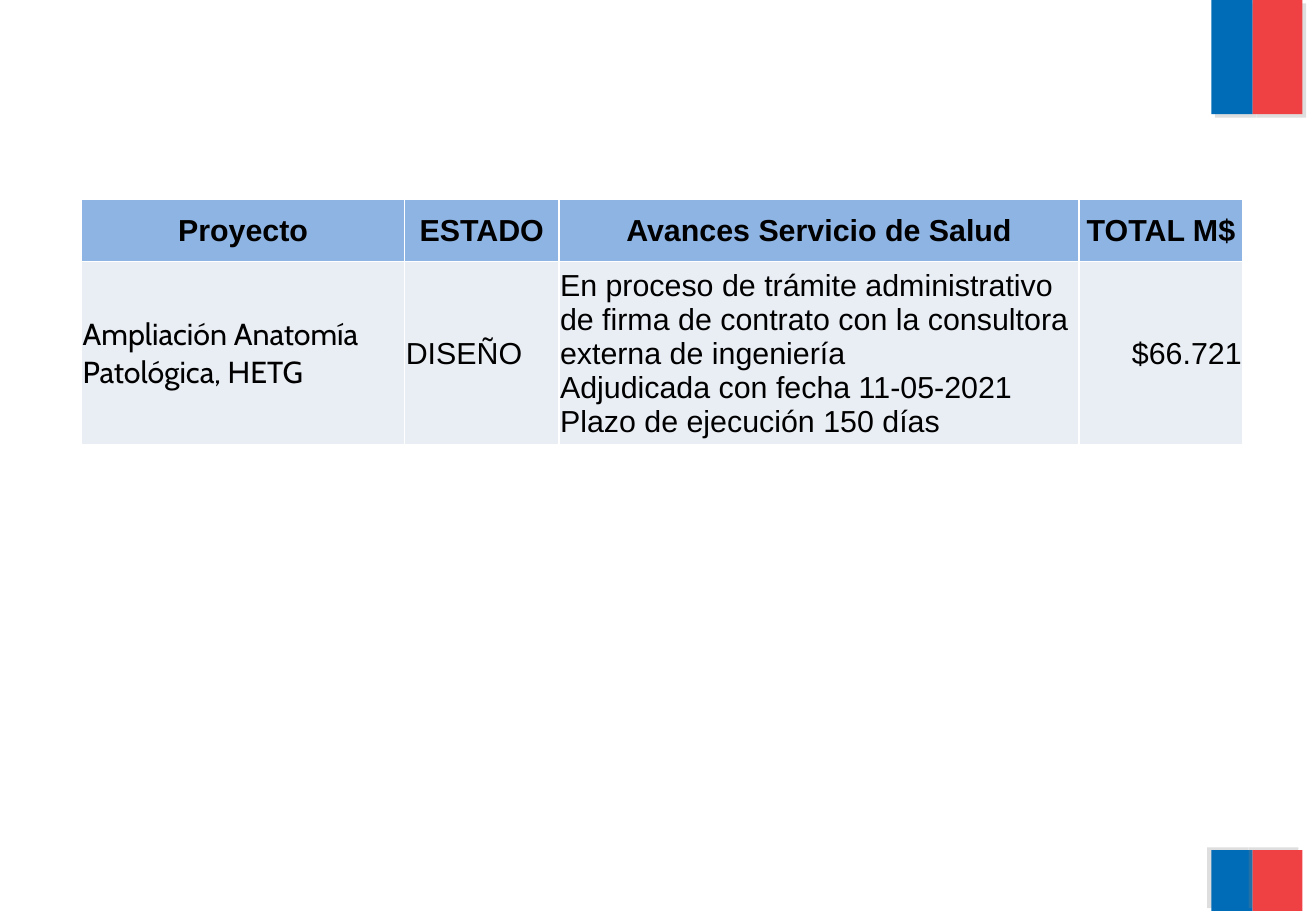
from lxml.etree import SubElement
from pptx import Presentation
from pptx.dml.color import RGBColor
from pptx.enum.shapes import MSO_SHAPE
from pptx.enum.text import MSO_ANCHOR, PP_ALIGN as ALIGN
from pptx.oxml.ns import qn
from pptx.util import Pt

COLORS = {
    "blue": "006CB7", "red": "EF4144", "shadow": "808080", "text": "000000",
    "header": "8EB4E3", "body": "E9EDF4", "border": "FFFFFF",
}
SLIDE_WIDTH, SLIDE_HEIGHT = 779.8, 540
COLUMN_WIDTHS = [191.5, 91.4, 308.3, 97]
ROW_HEIGHTS = [36.7, 108.7]
HEADERS = ["Proyecto", "ESTADO", "Avances Servicio de Salud", "TOTAL M$"]
PROJECT = [
    "Ampliación Anatomía Patológica, HETG",
    "DISEÑO",
    "En proceso de trámite administrativo de firma de contrato con la consultora "
    "externa de ingeniería\n"
    "Adjudicada con fecha 11-05-2021\n"
    "Plazo de ejecución 150 días",
    "$66.721",
]
PROJECT_FONTS = ["Cabin", "Arial", "Arial", "Arial"]
PROJECT_ALIGNS = [ALIGN.LEFT, ALIGN.LEFT, ALIGN.LEFT, ALIGN.RIGHT]


def add_solid_fill(parent, color):
    fill = SubElement(parent, qn("a:solidFill"))
    SubElement(fill, qn("a:srgbClr"), val=COLORS[color])


class SlideBuilder:
    font_size = 18
    shadow_distance = 3
    shadow_alpha = 25

    def __init__(self, slide):
        self.slide = slide

    def band(self, left, top, width, height, color, shadow_angle):
        """Add a plain rectangle with a hard shadow cast at the given angle."""
        shape = self.slide.shapes.add_shape(
            MSO_SHAPE.RECTANGLE, Pt(left), Pt(top), Pt(width), Pt(height))
        shape.fill.solid()
        shape.fill.fore_color.rgb = RGBColor.from_string(COLORS[color])
        shape.line.fill.background()
        shape.shadow.inherit = False
        effects = shape._element.spPr.find(qn("a:effectLst"))
        shadow = SubElement(
            effects, qn("a:outerShdw"), blurRad="0", dist=str(Pt(self.shadow_distance)),
            dir=str(shadow_angle * 60000), algn="ctr", rotWithShape="0")
        shadow_color = SubElement(shadow, qn("a:srgbClr"), val=COLORS["shadow"])
        SubElement(shadow_color, qn("a:alpha"), val=str(self.shadow_alpha * 1000))

    def flag(self, top, height, shadow_angle):
        """Add the blue and red bands side by side."""
        self.band(717.8, top, 24.5, height, "blue", shadow_angle)
        self.band(742.3, top, 29.5, height, "red", shadow_angle)

    def table(self, left, top, column_widths, row_heights):
        table = self.slide.shapes.add_table(
            len(row_heights), len(column_widths), Pt(left), Pt(top),
            Pt(sum(column_widths)), Pt(sum(row_heights))).table
        for column, width in zip(table.columns, column_widths):
            column.width = Pt(width)
        for row, height in zip(table.rows, row_heights):
            row.height = Pt(height)
        return table

    def cell(self, cell, text, fill, align, font="Arial", bold=False):
        cell.text_frame.text = text
        cell.vertical_anchor = MSO_ANCHOR.MIDDLE
        cell.margin_left = cell.margin_right = cell.margin_top = Pt(0.7)
        cell.margin_bottom = Pt(0)
        for paragraph in cell.text_frame.paragraphs:
            paragraph.alignment = align
            for run in paragraph.runs:
                run.font.name = font
                run.font.size = Pt(self.font_size)
                run.font.bold = bold
                run.font.color.rgb = RGBColor.from_string(COLORS["text"])
        properties = cell._tc.get_or_add_tcPr()
        for side in ("lnL", "lnR", "lnT", "lnB"):
            border = SubElement(properties, qn(f"a:{side}"), w=str(Pt(1)))
            add_solid_fill(border, "border")
        cell.fill.solid()
        cell.fill.fore_color.rgb = RGBColor.from_string(COLORS[fill])


def main():
    presentation = Presentation()
    presentation.slide_width = Pt(SLIDE_WIDTH)
    presentation.slide_height = Pt(SLIDE_HEIGHT)
    builder = SlideBuilder(presentation.slides.add_slide(presentation.slide_layouts[6]))

    builder.flag(0, 67.7, shadow_angle=45)
    builder.flag(504, 36, shadow_angle=215)

    table = builder.table(48.3, 118.3, COLUMN_WIDTHS, ROW_HEIGHTS)
    for column, header in enumerate(HEADERS):
        builder.cell(table.cell(0, column), header, "header", ALIGN.CENTER, bold=True)
    for column, (text, font, align) in enumerate(zip(PROJECT, PROJECT_FONTS, PROJECT_ALIGNS)):
        builder.cell(table.cell(1, column), text, "body", align, font)

    presentation.save("out.pptx")


if __name__ == "__main__":
    main()
